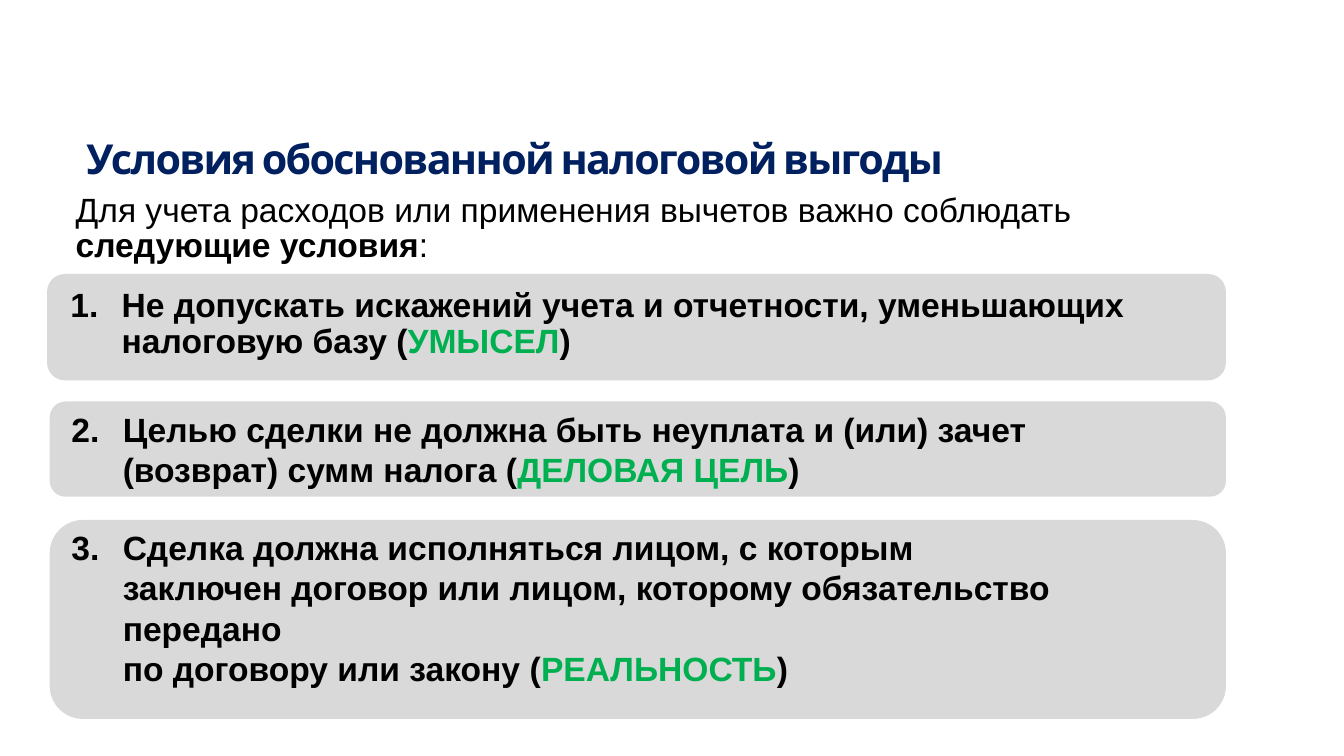
from lxml.etree import SubElement
from pptx import Presentation
from pptx.dml.color import RGBColor
from pptx.enum.shapes import MSO_SHAPE
from pptx.enum.text import MSO_ANCHOR, MSO_AUTO_SIZE, PP_ALIGN
from pptx.oxml.ns import qn
from pptx.util import Cm, Pt

NAVY, BLACK, GREEN, GREY = "002060", "000000", "00B050", "D9D9D9"
INDENT = Cm(0.97)

# card box, text box (both in cm), line pitch in points, lead, key word
RULES = [
    ((0.89, 5.18, 22.28, 2.01), (1.2, 5.33, 20.32, 1.96), 19,
     "Не допускать искажений учета и отчетности, уменьшающих налоговую базу (",
     "УМЫСЕЛ"),
    ((0.94, 7.59, 22.23, 1.8), (1.22, 7.59, 18.87, 1.73), 21.6,
     "Целью сделки не должна быть неуплата и (или) зачет (возврат) сумм налога (",
     "ДЕЛОВАЯ ЦЕЛЬ"),
    ((0.94, 9.83, 22.23, 3.76), (1.22, 9.83, 18.87, 3.2), 21.6,
     "Сделка должна исполняться лицом, с которым заключен договор или лицом, "
     "которому обязательство передано\vпо договору или закону (",
     "РЕАЛЬНОСТЬ"),
]


def color(code):
    return RGBColor.from_string(code)


def style(run, size, code, bold, font="Arial"):
    run.font.name = font
    run.font.size = Pt(size)
    run.font.bold = bold
    run.font.color.rgb = color(code)


def place(holder, box, pitch):
    """Move a placeholder, reset its frame and return its first paragraph."""
    holder.left, holder.top, holder.width, holder.height = map(Cm, box)
    frame = holder.text_frame
    frame.margin_left = frame.margin_right = Cm(0.13)
    frame.margin_top = frame.margin_bottom = Cm(0.13)
    frame.word_wrap = True
    frame.auto_size = MSO_AUTO_SIZE.NONE
    frame.vertical_anchor = MSO_ANCHOR.TOP
    para = frame.paragraphs[0]
    para.alignment = PP_ALIGN.LEFT
    para.line_spacing = Pt(pitch)
    para.space_before = para.space_after = Pt(0)
    return para


def bullet(para, start=None):
    """Number the paragraph from start, or take its bullet away."""
    props = para._p.get_or_add_pPr()
    props.set("marL", str(INDENT if start else 0))
    props.set("indent", str(-INDENT if start else 0))
    if start:
        SubElement(props, qn("a:buFont"), typeface="+mj-lt")
        SubElement(props, qn("a:buAutoNum"), type="arabicPeriod", startAt=str(start))
    else:
        SubElement(props, qn("a:buNone"))


def write(para, lead, bold, *parts):
    """Fill in the lead, then add each (text, colour, bold) part as a run."""
    para.text = lead
    for run in para.runs:
        style(run, 18, BLACK, bold)
    for text, code, heavy in parts:
        run = para.add_run()
        run.text = text
        style(run, 18, code, heavy)


def add_title(holder):
    para = place(holder, (1.5, 2.54, 18.36, 1.14), 22)
    para.text = "Условия обоснованной налоговой выгоды"
    run = para.runs[0]
    style(run, 22.1, NAVY, True, "Cabin")
    run.font._element.set("spc", "-90")


def add_intro(holder):
    para = place(holder, (1.3, 3.53, 20.32, 1.6), 19)
    bullet(para)
    write(para, "Для учета расходов или применения вычетов важно соблюдать\v", False,
          ("следующие условия", BLACK, True), (":", BLACK, False))


def add_card(slide, box, layer):
    """Draw a rounded card behind the text placeholders."""
    card = slide.shapes.add_shape(MSO_SHAPE.ROUNDED_RECTANGLE, *map(Cm, box))
    card.shadow.inherit = False
    card.fill.solid()
    card.fill.fore_color.rgb = color(GREY)
    card.line.fill.background()
    slide.shapes._spTree.insert(2 + layer, card._element)


def add_rule(holder, num, box, pitch, lead, key):
    para = place(holder, box, pitch)
    bullet(para, num)
    write(para, lead, True, (key, GREEN, True), (")", BLACK, True))


def main():
    deck = Presentation()
    deck.slide_width, deck.slide_height = Cm(25.4), Cm(14.29)
    # The Comparison layout has a title and four body placeholders.
    slide = deck.slides.add_slide(deck.slide_layouts[4])
    holders = slide.placeholders
    add_title(slide.shapes.title)
    add_intro(holders[1])
    for num, (card, box, pitch, lead, key) in enumerate(RULES, 1):
        add_card(slide, card, num - 1)
        add_rule(holders[num + 1], num, box, pitch, lead, key)
    deck.save("out.pptx")


if __name__ == "__main__":
    main()
